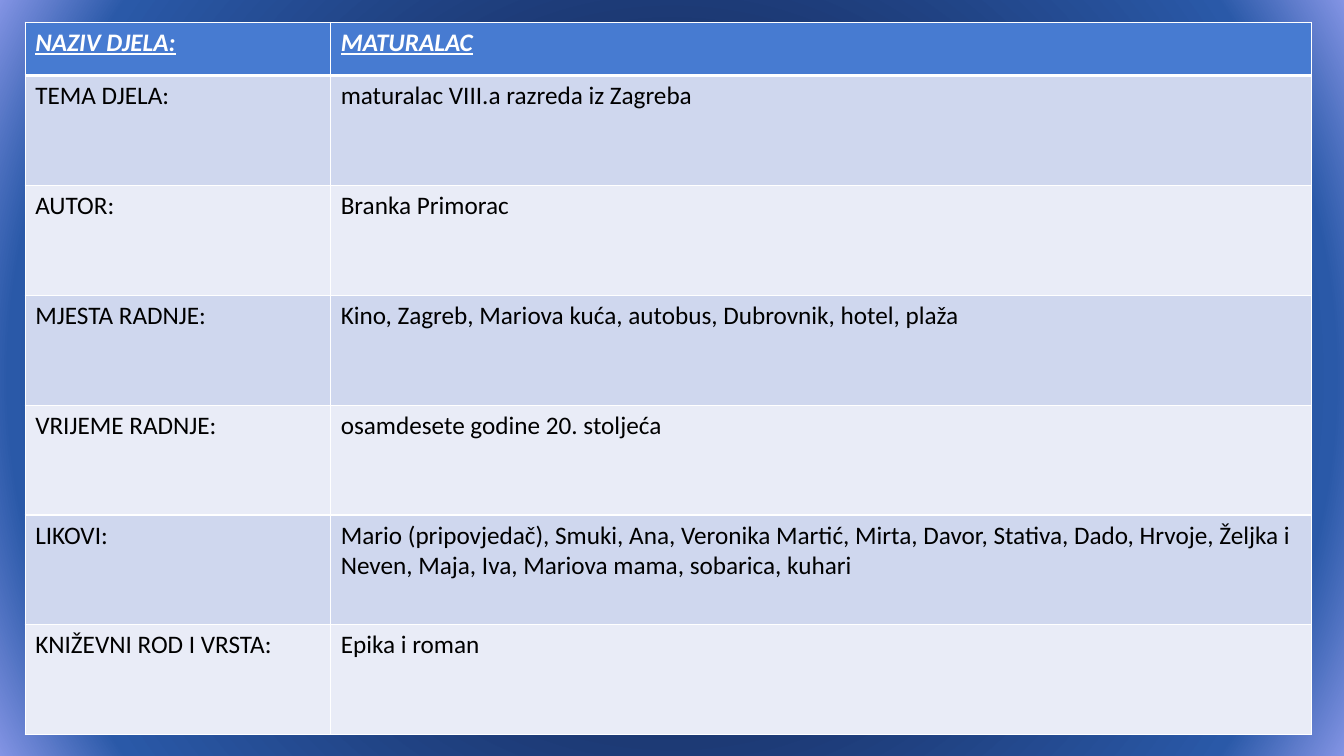
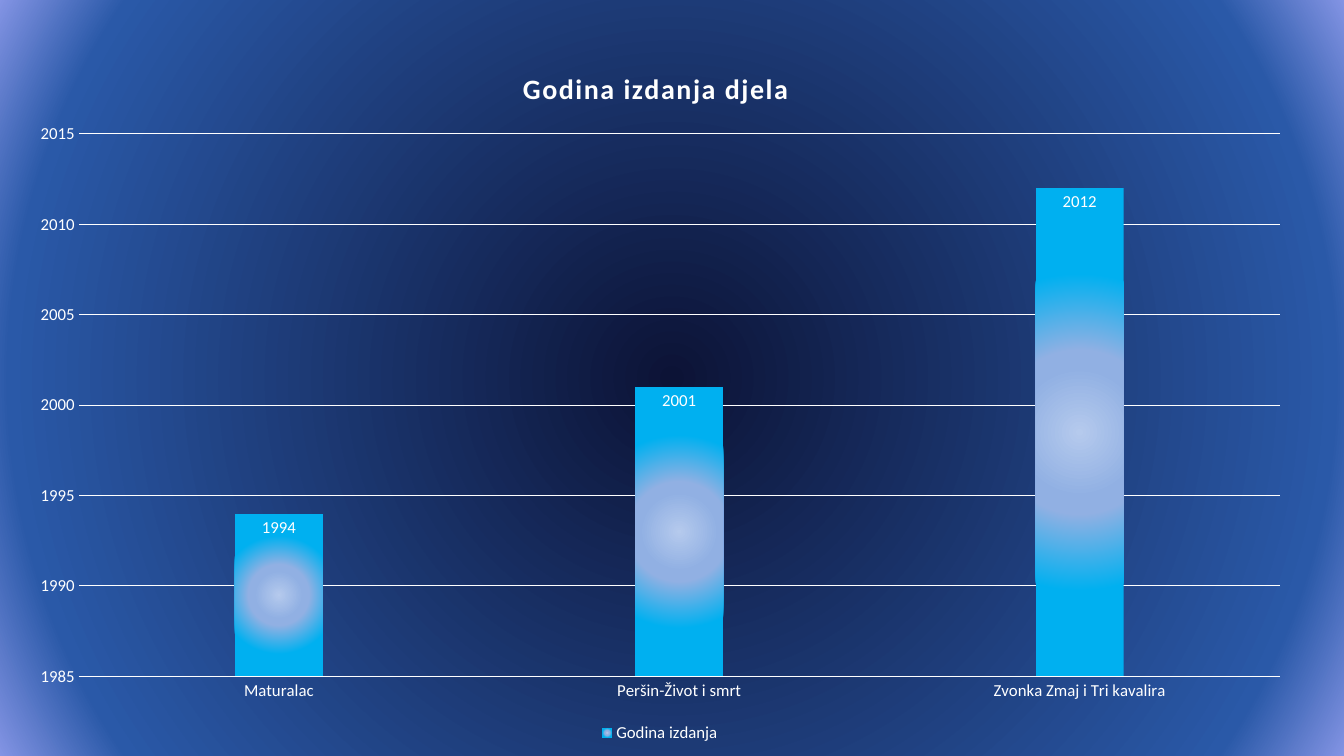
from lxml import etree
from pptx import Presentation
from pptx import util as u
from pptx.chart import data
from pptx.dml.color import RGBColor
from pptx.enum import chart as ch
from pptx.oxml import ns, parse_xml

COLORS = {
    "text": "FFFFFF", "line": "FFFFFF", "cell_text": "000000",
    "header": "477BD1", "odd_row": "CFD7EE", "even_row": "E9ECF7",
}
FONT = "Calibri"
BACKGROUND_STOPS = [(0, "0C1336"), (86, "2A59A8"), (100, "8394E4"), (100, "27549D")]
COLUMN_STOPS = [(0, "B5CAED"), (26, "91B0E3"), (33, "91B0E3"), (64, "00B0F0")]

WORK_FACTS = [
    ("NAZIV DJELA:", "MATURALAC"),
    ("TEMA DJELA:", "maturalac VIII.a razreda iz Zagreba"),
    ("AUTOR:", "Branka Primorac"),
    ("MJESTA RADNJE:", "Kino, Zagreb, Mariova kuća, autobus, Dubrovnik, hotel, plaža"),
    ("VRIJEME RADNJE:", "osamdesete godine 20. stoljeća"),
    ("LIKOVI:", "Mario (pripovjedač), Smuki, Ana, Veronika Martić, Mirta, Davor, "
                "Stativa, Dado, Hrvoje, Željka i Neven, Maja, Iva, Mariova mama, "
                "sobarica, kuhari"),
    ("KNIŽEVNI ROD I VRSTA:", "Epika i roman"),
]
EDITIONS = {"Maturalac": 1994, "Peršin-Život i smrt": 2001, "Zvonka Zmaj i Tri kavalira": 2012}


def rgb(name):
    return RGBColor.from_string(COLORS[name])


def set_values(target, values):
    for name, value in values.items():
        setattr(target, name, value)


def make_radial(fill_parent, stops):
    """Swap the solid fill of an element for a circular gradient."""
    stop_xml = "".join(
        f'<a:gs pos="{pos * 1000}"><a:srgbClr val="{color}"/></a:gs>' for pos, color in stops)
    gradient = parse_xml(
        f'<a:gradFill {ns.nsdecls("a")} rotWithShape="1"><a:gsLst>{stop_xml}</a:gsLst>'
        '<a:path path="circle"><a:fillToRect l="50000" t="50000" r="50000" b="50000"/>'
        '</a:path></a:gradFill>')
    fill_parent.replace(fill_parent.find(ns.qn("a:solidFill")), gradient)


def set_layout(part, index, **fractions):
    """Place a chart part by fractions of the chart's size."""
    for old in part.findall(ns.qn("c:layout")):
        part.remove(old)
    layout = etree.Element(ns.qn("c:layout"))
    manual = etree.SubElement(layout, ns.qn("c:manualLayout"))
    settings = {"xMode": "edge", "yMode": "edge", **fractions}
    if "w" in fractions:
        settings = {"layoutTarget": "inner", **settings}
    for tag, value in settings.items():
        etree.SubElement(manual, ns.qn(f"c:{tag}")).set("val", str(value))
    part.insert(index, layout)


class Deck:
    """Holds the shared style and the current slide."""

    def __init__(self):
        self.prs = Presentation()
        set_values(self.prs, {"slide_width": u.Inches(13.33), "slide_height": u.Inches(7.5)})
        master = self.prs.slide_master
        master.background.fill.solid()
        make_radial(master.element.find(".//" + ns.qn("p:bgPr")), BACKGROUND_STOPS)
        self.slide = None

    def new_slide(self):
        self.slide = self.prs.slides.add_slide(self.prs.slide_layouts[6])

    def style_font(self, font, size, color="text", **extra):
        set_values(font, {"name": FONT, "size": u.Pt(size), **extra})
        font.color.rgb = rgb(color)

    def style_line(self, line, width):
        line.color.rgb = rgb("line")
        line.width = u.Pt(width)

    def cell_borders(self, cell, widths):
        properties = cell._tc.get_or_add_tcPr()
        for side in "LRTB":
            border = etree.SubElement(
                properties, ns.qn(f"a:ln{side}"), w=str(u.Pt(widths.get(side, 1))))
            fill = etree.SubElement(border, ns.qn("a:solidFill"))
            etree.SubElement(fill, ns.qn("a:srgbClr"), val=COLORS["line"])

    def table(self, rows, left, top, column_widths, header_height, row_height):
        heights = [header_height] + [row_height] * (len(rows) - 1)
        table = self.slide.shapes.add_table(
            len(rows), len(column_widths), u.Inches(left), u.Inches(top),
            u.Inches(sum(column_widths)), u.Inches(sum(heights))).table
        for column, width in zip(table.columns, column_widths):
            column.width = u.Inches(width)
        for index, (row, height, texts) in enumerate(zip(table.rows, heights, rows)):
            row.height = u.Inches(height)
            header = index == 0
            fill = "header" if header else ("even_row", "odd_row")[index % 2]
            thick_side = {0: {"B": 3}, 1: {"T": 3}}.get(index, {})
            for cell, content in zip(row.cells, texts):
                cell.text = content
                self.cell_borders(cell, thick_side)
                cell.fill.solid()
                cell.fill.fore_color.rgb = rgb(fill)
                self.style_font(cell.text_frame.paragraphs[0].runs[0].font, 18,
                                "text" if header else "cell_text",
                                bold=header, italic=header, underline=header)

    def column_chart(self, title, series_name, values, left, top, width, height):
        chart_data = data.CategoryChartData()
        chart_data.categories = list(values)
        chart_data.add_series(series_name, list(values.values()))
        chart = self.slide.shapes.add_chart(
            ch.XL_CHART_TYPE.COLUMN_CLUSTERED, u.Inches(left), u.Inches(top),
            u.Inches(width), u.Inches(height), chart_data).chart
        self.style_font(chart.font, 10)
        self.chart_title(chart, title)
        self.chart_axes(chart)

        plot = chart.plots[0]
        set_values(plot, {"gap_width": 355, "overlap": -70, "vary_by_categories": False})
        set_layout(chart._chartSpace.find(".//" + ns.qn("c:plotArea")), 0,
                   x=0.05, y=0.13, w=0.93, h=0.77)
        series = plot.series[0]
        series.format.fill.solid()
        make_radial(series._element.find(ns.qn("c:spPr")), COLUMN_STOPS)
        labels = series.data_labels
        set_values(labels, {"show_value": True, "position": ch.XL_LABEL_POSITION.INSIDE_END})
        self.style_font(labels.font, 12)

        chart.has_legend = True
        set_values(chart.legend, {"position": ch.XL_LEGEND_POSITION.BOTTOM,
                                  "include_in_layout": False})
        self.style_font(chart.legend.font, 12)

    def chart_title(self, chart, title):
        chart.has_title = True
        frame = chart.chart_title.text_frame
        frame.text = title
        run = frame.paragraphs[0].runs[0]
        self.style_font(run.font, 20, bold=True)
        run.font._element.set("spc", "100")
        set_layout(chart.chart_title._element, 1, x=0.39, y=0.03)

    def chart_axes(self, chart):
        years = chart.value_axis
        set_values(years, {"minimum_scale": 1985, "maximum_scale": 2015, "major_unit": 5,
                           "has_major_gridlines": True})
        for axis in (chart.category_axis, years):
            set_values(axis, {"major_tick_mark": ch.XL_TICK_MARK.NONE,
                              "minor_tick_mark": ch.XL_TICK_MARK.NONE})
            self.style_font(axis.tick_labels.font, 12)
        self.style_line(chart.category_axis.format.line, 0.75)
        self.style_line(years.major_gridlines.format.line, 0.75)
        years.format.line.fill.background()


def main():
    deck = Deck()
    deck.new_slide()
    deck.table(WORK_FACTS, 0.25, 0.22, [3.03, 9.73], 0.53, 1.09)
    deck.new_slide()
    deck.column_chart("Godina izdanja djela", "Godina izdanja", EDITIONS,
                      0.14, 0.42, 12.81, 6.99)
    deck.prs.save("out.pptx")


if __name__ == "__main__":
    main()
